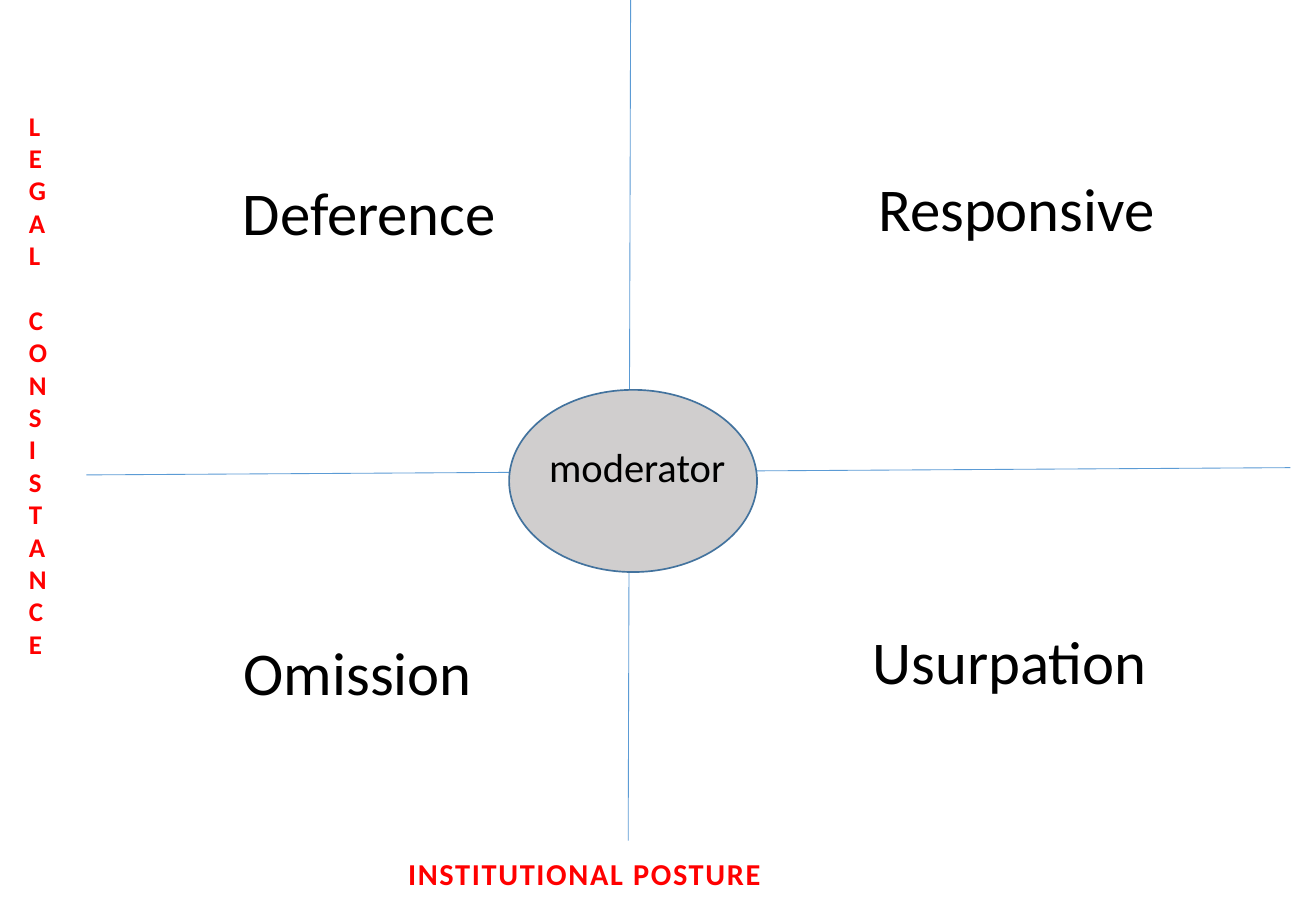
from lxml import etree
from pptx import Presentation
from pptx.dml.color import RGBColor
from pptx.enum import shapes, text
from pptx.oxml import ns
from pptx.util import Inches, Pt


def paint(color_format, hex_color):
    color_format.rgb = RGBColor.from_string(hex_color)


def add_label(left, top, width, height, wording, size, color="000000", bold=False,
              align=text.PP_ALIGN.LEFT):
    label = slide.shapes.add_textbox(Inches(left), Inches(top), Inches(width), Inches(height))
    label.text_frame.word_wrap = True
    paragraph = label.text_frame.paragraphs[0]
    paragraph.text = wording
    paragraph.alignment = align
    paragraph.font.name = "Calibri"
    paragraph.font.size = Pt(size)
    paragraph.font.bold = bold
    paint(paragraph.font.color, color)
    return label


prs = Presentation()
prs.slide_width, prs.slide_height = Inches(10.83), Inches(7.5)
slide = prs.slides.add_slide(prs.slide_layouts[6])

# Axes
for x1, y1, x2, y2 in [(5.19, 0, 5.17, 6.92), (10.62, 3.85, 0.71, 3.91)]:
    axis = slide.shapes.add_connector(
        shapes.MSO_CONNECTOR.STRAIGHT, Inches(x1), Inches(y1), Inches(x2), Inches(y2))
    paint(axis.line.color, "5B9BD5")
    axis.line.width = Pt(0.5)
    etree.SubElement(axis.element.spPr, ns.qn("a:effectLst"))

# Quadrants
for left, top, width, height, quadrant in [
    (1.17, 1.39, 3.74, 1.11, "Deference"),
    (0.76, 5.18, 4.37, 0.71, "Omission"),
    (6.27, 5.09, 4.08, 0.71, "Usurpation"),
    (6.17, 1.36, 4.39, 0.73, "Responsive"),
]:
    add_label(left, top, width, height, quadrant, 36, align=text.PP_ALIGN.CENTER)

# Axis names: stacked letters on the left, spaced letters below
legal = add_label(0.14, 0.85, 0.52, 6.22, "LEGAL CONSISTANCE", 16, "FF0000", True)
legal.element.txBody.bodyPr.set("vert", "wordArtVert")
posture = add_label(3.26, 6.99, 3.29, 0.4, "INSTITUTIONAL POSTURE", 18, "FF0000", True)
posture.element.xpath(".//a:defRPr")[0].set("spc", "100")

# Moderator at the crossing
moderator = slide.shapes.add_shape(
    shapes.MSO_SHAPE.OVAL, Inches(4.19), Inches(3.21), Inches(2.04), Inches(1.5))
moderator.shadow.inherit = False
moderator.fill.solid()
paint(moderator.fill.fore_color, "D0CECE")
paint(moderator.line.color, "43739E")
moderator.line.width = Pt(1)
add_label(4.42, 3.59, 1.81, 0.5, "moderator", 24)

prs.save("out.pptx")
